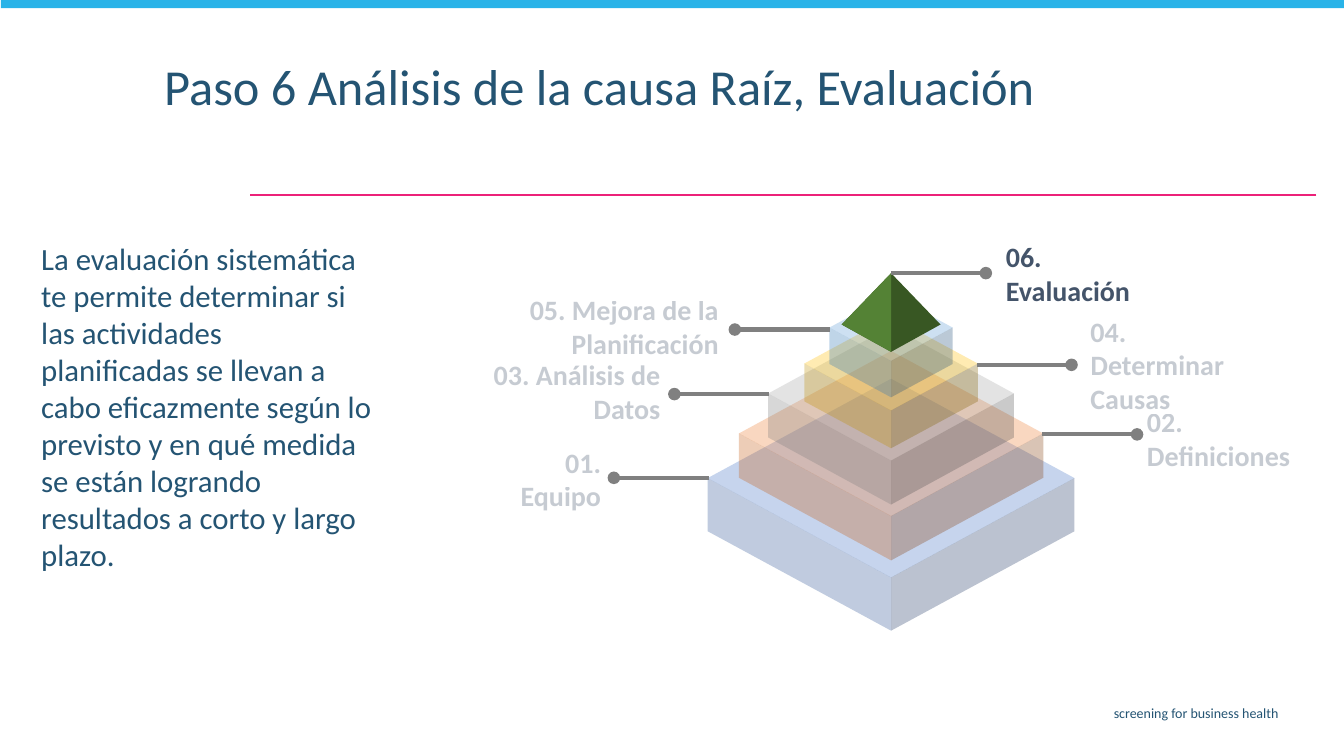
from lxml import etree
from pptx import Presentation
from pptx.dml.color import RGBColor
from pptx.enum import shapes, text
from pptx.oxml import ns
from pptx.util import Pt

# Colours
SKY = RGBColor(0x29, 0xB3, 0xE8)
PINK = RGBColor(0xEC, 0x21, 0x79)
NAVY = RGBColor(0x24, 0x54, 0x73)
SLATE = RGBColor(0x44, 0x54, 0x6A)
GRAY = RGBColor(0x80, 0x80, 0x80)
GREEN = RGBColor(0x54, 0x82, 0x35)
DARK_GREEN = RGBColor(0x38, 0x57, 0x23)
FADED = 30  # opacity in percent of the steps already covered

# Content
TITLE = "Paso 6 Análisis de la causa Raíz, Evaluación"
BODY = ("La evaluación sistemática te permite determinar si las actividades "
        "planificadas se llevan a cabo eficazmente según lo previsto y en qué "
        "medida se están logrando resultados a corto y largo plazo.")
FOOTER = "screening for business health"

# Pyramid tiers, bottom up: centre y of the top face, half width,
# half height, depth, colours of the top, right and left faces
TIERS = [
    (341.5, 131, 71, 38, "4472C4", "203864", "2F5597"),
    (309.6, 108.7, 59, 31.7, "ED7D31", "843C0B", "C55A11"),
    (281.1, 87.8, 47.9, 31.4, "A5A5A5", "525252", "7C7C7C"),
    (259.7, 62, 33.5, 27, "FFC000", "806000", "BF9000"),
    (234, 44, 23.8, 26, "5B9BD5", "1F4E79", "2E75B6"),
]
AXIS_X = 636.5
APEX_TOP, APEX_SIDE, APEX_BOTTOM, APEX_HALF = 195.1, 231.8, 251.3, 35.3

# Labels: paragraphs, box, start of the leader, direction, opacity
LEADER = 67.7
LABELS = [
    (["06. Evaluación"], (711.4, 179.3, 128.9, 31.7), (636.5, 195.1), 1, 100),
    (["04. Determinar", "Causas"], (771.8, 232.6, 135.4, 55.4),
     (697.7, 260.6), 1, FADED),
    (["02. Definiciones"], (812.2, 297.4, 141.8, 31.7), (744.5, 310.3), 1, FADED),
    (["01. Equipo"], (337, 326.2, 99.4, 31.7), (506.2, 341.3), -1, FADED),
    (["03. Análisis de Datos"], (300.2, 263.5, 178.6, 31.7),
     (549.4, 281.5), -1, FADED),
    (["05. Mejora de la Planificación"], (271.4, 217.4, 249.1, 31.7),
     (592.6, 235.4), -1, FADED),
]


def set_opacity(fill_owner, percent):
    """Make the solid colour below an XML element partly transparent."""
    if percent < 100:
        color = fill_owner.find(".//" + ns.qn("a:srgbClr"))
        etree.SubElement(color, ns.qn("a:alpha"), val=str(percent * 1000))


def add_text(s, box, paragraphs, size, color, bold=False, opacity=100,
             align=text.PP_ALIGN.LEFT, anchor=text.MSO_ANCHOR.TOP):
    tf = s.shapes.add_textbox(*map(Pt, box)).text_frame
    tf.word_wrap = True
    tf.vertical_anchor = anchor
    for i, words in enumerate(paragraphs):
        p = tf.add_paragraph() if i else tf.paragraphs[0]
        p.alignment = align
        r = p.add_run()
        r.text = words
        r.font.name, r.font.size, r.font.bold = "Calibri", Pt(size), bold
        r.font.color.rgb = color
        set_opacity(r.font._element, opacity)
    return tf


def add_line(s, start, end, color, width, dot=False):
    line = s.shapes.add_connector(shapes.MSO_CONNECTOR.STRAIGHT,
                                  *map(Pt, start + end))
    line.line.color.rgb = color
    line.line.width = Pt(width)
    if dot:
        etree.SubElement(line.line._get_or_add_ln(), ns.qn("a:tailEnd"), type="oval")
    etree.SubElement(line._element.spPr, ns.qn("a:effectLst"))


def style(sp, color, opacity=100):
    sp.shadow.inherit = False
    sp.fill.solid()
    sp.fill.fore_color.rgb = color
    set_opacity(sp._element.spPr, opacity)
    sp.line.fill.background()


def add_face(s, points, color, opacity=100):
    corners = [(Pt(x), Pt(y)) for x, y in points]
    builder = s.shapes.build_freeform(*corners[0])
    builder.add_line_segments(corners[1:], close=True)
    style(builder.convert_to_shape(), color, opacity)


def add_tier(s, y, half_w, half_h, depth, top, right, left):
    front = (AXIS_X, y + half_h)
    add_face(s, [(AXIS_X, y - half_h), (AXIS_X + half_w, y), front,
                 (AXIS_X - half_w, y)], RGBColor.from_string(top), FADED)
    for x, color in ((AXIS_X + half_w, right), (AXIS_X - half_w, left)):
        add_face(s, [(AXIS_X, y + half_h + depth), (x, y + depth), (x, y), front],
                 RGBColor.from_string(color), FADED)


prs = Presentation()
prs.slide_width, prs.slide_height = Pt(960), Pt(540)
s = prs.slides.add_slide(prs.slide_layouts[6])

# Frame of the page
add_line(s, (940.3, 139), (178.6, 139), PINK, 1.5)
bar = s.shapes.add_shape(shapes.MSO_SHAPE.RECTANGLE,
                         Pt(0.7), Pt(-1.4), Pt(960.5), Pt(7.2))
style(bar, SKY)
add_text(s, (262.8, 499.7, 657.4, 20.9), [FOOTER], 10, NAVY,
         align=text.PP_ALIGN.RIGHT)

# Explanation
tf = add_text(s, (23, 168.5, 249.8, 246.2), [BODY], 22, NAVY)
tf.margin_left = tf.margin_right = Pt(6.5)
tf.margin_top = tf.margin_bottom = Pt(2.9)

# Pyramid with its apex
for tier in TIERS:
    add_tier(s, *tier)
apex, front = (AXIS_X, APEX_TOP), (AXIS_X, APEX_BOTTOM)
left_corner = (AXIS_X - APEX_HALF, APEX_SIDE)
right_corner = (AXIS_X + APEX_HALF, APEX_SIDE)
add_face(s, [apex, right_corner, front, left_corner], DARK_GREEN)
add_face(s, [apex, front, left_corner], GREEN)

# Leaders and labels
for paragraphs, box, (x, y), side, opacity in LABELS:
    add_line(s, (x, y), (x + side * LEADER, y), GRAY, 3, dot=True)
    align = text.PP_ALIGN.LEFT if side > 0 else text.PP_ALIGN.RIGHT
    add_text(s, box, paragraphs, 20, SLATE, True, opacity, align,
             text.MSO_ANCHOR.MIDDLE)

# Title
tf = add_text(s, (110.2, 41, 723.6, 64.8), [TITLE], 36, NAVY)
tf.paragraphs[0].line_spacing = 0.9

prs.save("out.pptx")
